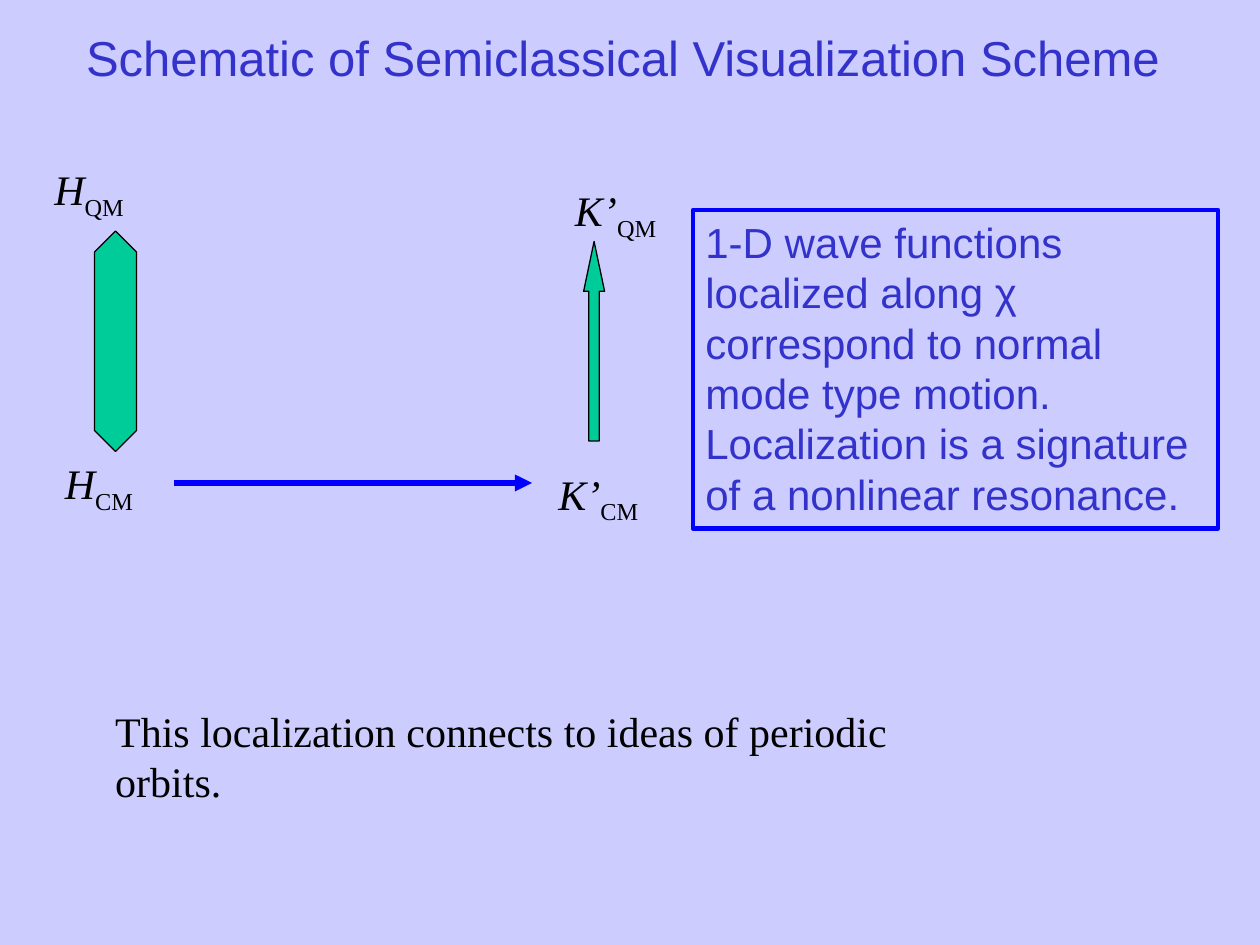
from pptx import Presentation
from pptx.dml.color import RGBColor
from pptx.enum import shapes, text
from pptx.oxml import ns, xmlchemy
from pptx.util import Pt

LAVENDER = RGBColor(0xCC, 0xCC, 0xFF)
INDIGO = RGBColor(0x33, 0x33, 0xCC)
BLUE = RGBColor(0x00, 0x00, 0xFF)
GREEN = RGBColor(0x00, 0xCC, 0x99)
BLACK = RGBColor(0x00, 0x00, 0x00)


class SchemeSlide:
    """Holds the text styles and the slide, and draws each kind of element."""

    serif = {"name": "Times New Roman", "size": Pt(24), "color": BLACK}
    sans = {"name": "Arial", "size": Pt(24), "color": INDIGO}
    heading = {**sans, "size": Pt(28)}

    def __init__(self, presentation):
        self.slide = presentation.slides.add_slide(presentation.slide_layouts[5])
        fill = self.slide.background.fill
        fill.solid()
        fill.fore_color.rgb = LAVENDER

    def place(self, shape, *box):
        for name, value in zip(("left", "top", "width", "height"), box):
            setattr(shape, name, Pt(value))

    def frame(self, shape, wrap=True):
        settings = {"word_wrap": wrap, "auto_size": text.MSO_AUTO_SIZE.NONE,
                    "vertical_anchor": text.MSO_ANCHOR.TOP}
        for name, value in settings.items():
            setattr(shape.text_frame, name, value)
        paragraph = shape.text_frame.paragraphs[0]
        paragraph.alignment = text.PP_ALIGN.LEFT
        return paragraph

    def run(self, paragraph, words, style, **extra):
        run = paragraph.add_run()
        run.text = words
        for name, value in {**style, **extra}.items():
            if name == "color":
                run.font.color.rgb = value
            else:
                setattr(run.font, name, value)
        return run

    def title(self, words, *box):
        shape = self.slide.shapes.title
        self.place(shape, *box)
        self.run(self.frame(shape, wrap=False), words, self.heading)

    def textbox(self, *box):
        return self.frame(self.slide.shapes.add_textbox(*map(Pt, box)))

    def note(self, words, *box):
        self.run(self.textbox(*box), words, self.serif)

    def symbol(self, letter, subscript, *box):
        paragraph = self.textbox(*box)
        self.run(paragraph, letter, self.serif, italic=True)
        lowered = self.run(paragraph, subscript, self.serif, italic=False)
        lowered.font._element.set("baseline", "-25000")

    def shape(self, kind, fill, line, width, *box):
        shape = self.slide.shapes.add_shape(kind, *map(Pt, box))
        shape.shadow.inherit = False
        if fill is None:
            shape.fill.background()
        else:
            shape.fill.solid()
            shape.fill.fore_color.rgb = fill
        shape.line.color.rgb = line
        shape.line.width = Pt(width)
        return shape

    def block_arrow(self, kind, head, *box):
        arrow = self.shape(kind, GREEN, BLACK, 0.75, *box)
        arrow.adjustments[0] = 0.5
        arrow.adjustments[1] = head

    def callout(self, words, *box):
        shape = self.shape(shapes.MSO_SHAPE.RECTANGLE, None, BLUE, 2.5, *box)
        self.run(self.frame(shape), words, self.sans)

    def arrow(self, *ends):
        line = self.slide.shapes.add_connector(
            shapes.MSO_CONNECTOR.STRAIGHT, *map(Pt, ends))
        line.line.color.rgb = BLUE
        line.line.width = Pt(3.25)
        head = xmlchemy.OxmlElement("a:tailEnd")
        head.set("type", "triangle")
        line.line._get_or_add_ln().append(head)
        properties = line._element.find(ns.qn("p:spPr"))
        properties.append(xmlchemy.OxmlElement("a:effectLst"))


def main():
    presentation = Presentation()
    presentation.slide_width = Pt(720)
    presentation.slide_height = Pt(540)

    scheme = SchemeSlide(presentation)
    scheme.title("Schematic of Semiclassical Visualization Scheme", 42, 12, 630, 41)
    scheme.symbol("H", "QM", 24, 90, 58, 36)
    scheme.symbol("H", "CM", 30, 258, 58, 36)
    scheme.block_arrow(shapes.MSO_SHAPE.UP_DOWN_ARROW, 1.05, 54, 132, 24, 126)
    scheme.arrow(99.5, 276, 304, 276)
    scheme.symbol("K’", "CM", 312, 264, 90, 36)
    scheme.symbol("K’", "QM", 321.5, 102, 78, 36)
    scheme.block_arrow(shapes.MSO_SHAPE.UP_ARROW, 2.38, 333.5, 138, 12, 114)
    scheme.callout(
        "1-D wave functions localized along χ correspond to normal mode type "
        "motion. Localization is a signature of a nonlinear resonance.",
        396, 120, 300, 182)
    scheme.note("This localization connects to ideas of periodic orbits.",
                58.75, 399.5, 518, 36)
    presentation.save("out.pptx")


if __name__ == "__main__":
    main()
